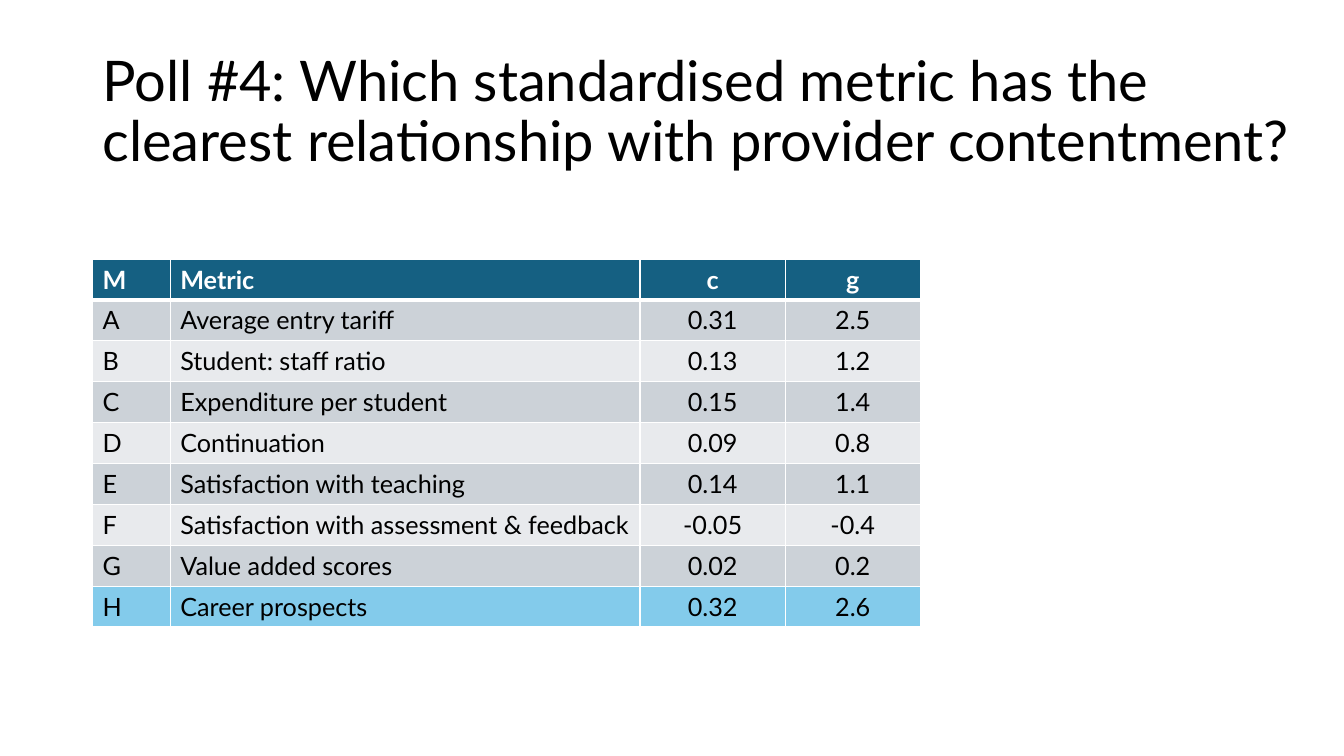
from pptx import Presentation
from pptx.dml.color import RGBColor
from pptx.enum.text import MSO_ANCHOR, MSO_AUTO_SIZE, PP_ALIGN
from pptx.oxml.ns import qn
from pptx.util import Cm, Pt
from lxml.etree import SubElement

TITLE = "Poll #4: Which standardised metric has the clearest relationship with provider contentment?"
ROWS = [
    ("M", "Metric", "c", "g"),
    ("A", "Average entry tariff", "0.31", "2.5"),
    ("B", "Student: staff ratio", "0.13", "1.2"),
    ("C", "Expenditure per student", "0.15", "1.4"),
    ("D", "Continuation", "0.09", "0.8"),
    ("E", "Satisfaction with teaching", "0.14", "1.1"),
    ("F", "Satisfaction with assessment & feedback", "-0.05", "-0.4"),
    ("G", "Value added scores", "0.02", "0.2"),
    ("H", "Career prospects", "0.32", "2.6"),
]
COL_WIDTHS = [1.96, 11.84, 3.66, 3.4]
ALIGNS = [PP_ALIGN.LEFT, PP_ALIGN.LEFT, PP_ALIGN.CENTER, PP_ALIGN.CENTER]
ROW_HEIGHT = 1.03
LEFT = 2.33
HEADER_FILL, BEST_FILL = "156082", "83CBEB"
BAND_FILLS = ["E8EAED", "CCD2D8"]
WHITE, BLACK = "FFFFFF", "000000"


def rgb(color):
    return RGBColor.from_string(color)


def write(tf, text, align, size, color, bold=False):
    p = tf.paragraphs[0]
    p.alignment = align
    r = p.add_run()
    r.text = text
    for name, value in {"name": "Lato", "size": Pt(size), "bold": bold}.items():
        setattr(r.font, name, value)
    r.font.color.rgb = rgb(color)
    return p


def add_borders(cell, widths):
    """Draw white cell borders; widths maps a side (L, R, T, B) to points."""
    tcPr = cell._tc.get_or_add_tcPr()
    for side, width in widths.items():
        ln = SubElement(tcPr, qn(f"a:ln{side}"), w=str(Pt(width)))
        SubElement(SubElement(ln, qn("a:solidFill")), qn("a:srgbClr"), val=WHITE)


def row_fill(i):
    if i == 0:
        return HEADER_FILL
    return BEST_FILL if i == len(ROWS) - 1 else BAND_FILLS[i % 2]


prs = Presentation()
prs.slide_width, prs.slide_height = Cm(33.87), Cm(19.05)
s = prs.slides.add_slide(prs.slide_layouts[5])

title = s.shapes.title
title.left, title.top, title.width, title.height = Cm(LEFT), Cm(1.02), Cm(30.48), Cm(3.68)
tf = title.text_frame
for name, value in {"word_wrap": True, "auto_size": MSO_AUTO_SIZE.NONE,
                    "vertical_anchor": MSO_ANCHOR.MIDDLE}.items():
    setattr(tf, name, value)
p = write(tf, TITLE, PP_ALIGN.LEFT, 40, BLACK)
p.line_spacing = 0.9
p.space_before = Pt(0)

table = s.shapes.add_table(len(ROWS), len(COL_WIDTHS), Cm(LEFT), Cm(6.53),
                           Cm(sum(COL_WIDTHS)), Cm(ROW_HEIGHT * len(ROWS))).table
for col, width in zip(table.columns, COL_WIDTHS):
    col.width = Cm(width)
for i, values in enumerate(ROWS):
    table.rows[i].height = Cm(ROW_HEIGHT)
    header = i == 0
    for j, text in enumerate(values):
        cell = table.cell(i, j)
        add_borders(cell, {"L": 1, "R": 1, "T": 3 if i == 1 else 1, "B": 3 if header else 1})
        cell.fill.solid()
        cell.fill.fore_color.rgb = rgb(row_fill(i))
        write(cell.text_frame, text, ALIGNS[j], 18, WHITE if header else BLACK, header)

prs.save("out.pptx")
